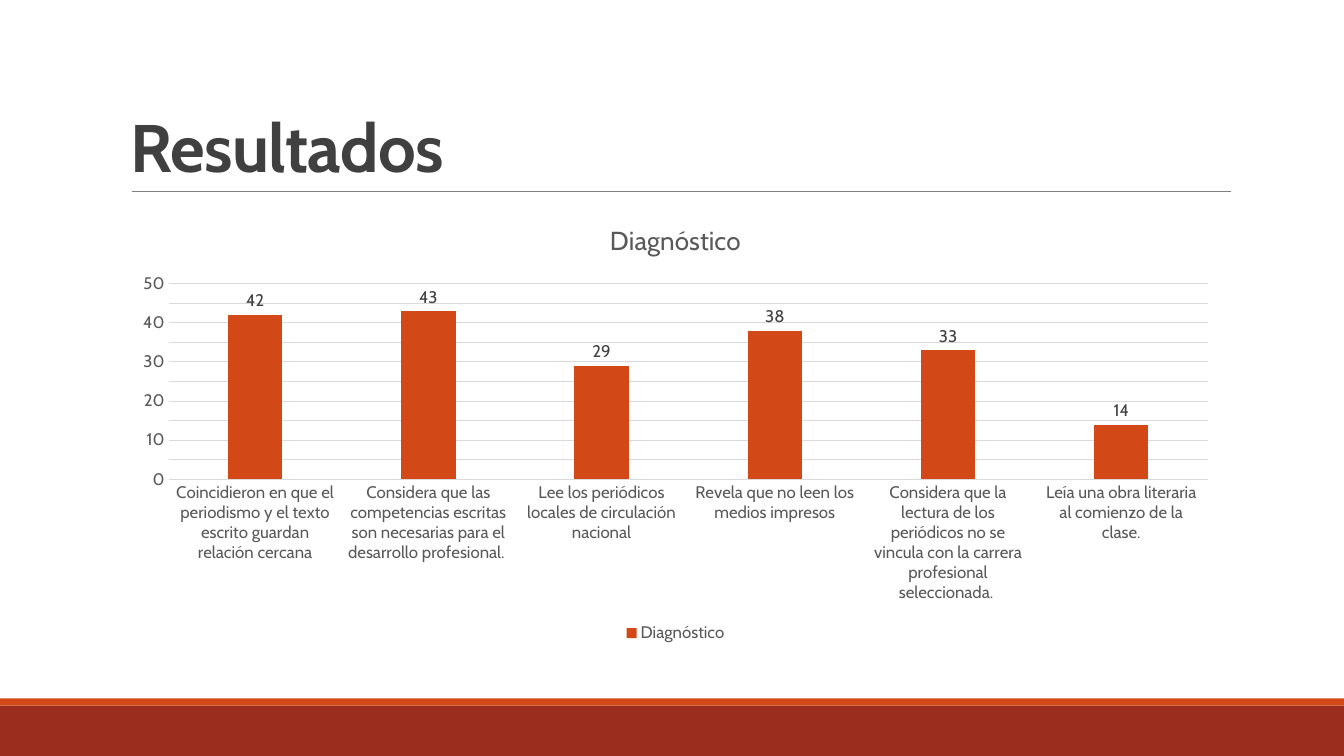
from copy import deepcopy

from pptx import Presentation
from pptx.chart.data import CategoryChartData
from pptx.dml.color import RGBColor
from pptx.enum.chart import XL_CHART_TYPE as ChartType, XL_LABEL_POSITION as LabelPosition
from pptx.enum.chart import XL_LEGEND_POSITION as LegendPosition, XL_TICK_MARK as TickMark
from pptx.enum.shapes import MSO_CONNECTOR as Connector, MSO_SHAPE as Shape
from pptx.enum.text import MSO_ANCHOR as Anchor
from pptx.oxml.ns import qn
from pptx.util import Inches, Pt
from lxml import etree

FONT = "Cabin"
COLORS = {
    "band": "9B2D1F",
    "accent": "D34817",
    "rule": "808080",
    "dark": "404040",
    "text": "595959",
    "grid": "D9D9D9",
}
ANSWERS = {
    "Coincidieron en que el periodismo y el texto escrito guardan relación cercana": 42,
    "Considera que las competencias escritas son necesarias para el desarrollo profesional. ": 43,
    "Lee los periódicos locales de circulación nacional": 29,
    "Revela que no leen los medios impresos": 38,
    "Considera que la lectura de los periódicos no se vincula con la carrera "
    "profesional seleccionada. ": 33,
    "Leía una obra literaria al comienzo de la clase.": 14,
}


def color(name):
    return RGBColor.from_string(COLORS[name])


def style_font(font, size, name, bold=False):
    font.name = FONT
    font.size = Pt(size)
    font.bold = bold
    font.color.rgb = color(name)


def style_line(line, name, width):
    line.color.rgb = color(name)
    line.width = Pt(width)


def add_footer(page, left, top, width, height):
    """Draw a thin accent stripe above a dark band."""
    stripe = 0.07
    for name, y, tall in (("band", top + stripe, height - stripe), ("accent", top, stripe)):
        bar = page.shapes.add_shape(
            Shape.RECTANGLE, Inches(left), Inches(y), Inches(width), Inches(tall))
        bar.shadow.inherit = False
        bar.fill.solid()
        bar.fill.fore_color.rgb = color(name)
        bar.line.fill.background()


def add_heading(page, text, left, top, width, height):
    """Set the title at the bottom of its box, with a rule below it."""
    box = page.shapes.add_textbox(Inches(left), Inches(top), Inches(width), Inches(height))
    frame = box.text_frame
    frame.word_wrap = True
    frame.vertical_anchor = Anchor.BOTTOM
    frame.text = text
    para = frame.paragraphs[0]
    para.line_spacing = 0.85
    span = para.runs[0]
    style_font(span.font, 48, "dark", bold=True)
    span.font._element.set("spc", "-50")

    bottom = Inches(top + height)
    rule = page.shapes.add_connector(
        Connector.STRAIGHT, Inches(left + 0.11), bottom, Inches(left + width + 0.01), bottom)
    style_line(rule.line, "rule", 0.5)
    etree.SubElement(rule._element.spPr, qn("a:effectLst"))


def style_gridlines(axis):
    """Give major and minor gridlines the same line."""
    axis.has_major_gridlines = axis.has_minor_gridlines = True
    style_line(axis.major_gridlines.format.line, "grid", 0.75)
    major, minor = (axis._element.find(qn(tag))
                    for tag in ("c:majorGridlines", "c:minorGridlines"))
    minor.append(deepcopy(major.find(qn("c:spPr"))))


def add_results_chart(page, name, answers, left, top, width, height):
    data = CategoryChartData()
    data.categories = list(answers)
    data.add_series(name, list(answers.values()))
    chart = page.shapes.add_chart(
        ChartType.COLUMN_CLUSTERED,
        Inches(left), Inches(top), Inches(width), Inches(height), data).chart
    style_font(chart.font, 10, "text")

    chart.has_title = True
    title = chart.chart_title.text_frame
    title.text = name
    style_font(title.paragraphs[0].runs[0].font, 18.6, "text")

    chart.has_legend = True
    chart.legend.position = LegendPosition.BOTTOM
    chart.legend.include_in_layout = False
    style_font(chart.legend.font, 12, "text")

    for axis in (chart.category_axis, chart.value_axis):
        axis.major_tick_mark = axis.minor_tick_mark = TickMark.NONE
        style_font(axis.tick_labels.font, 12, "text")
    style_line(chart.category_axis.format.line, "grid", 0.75)

    values = chart.value_axis
    values.minimum_scale, values.maximum_scale = 0, 50
    values.major_unit, values.minor_unit = 10, 5
    values.format.line.fill.background()
    style_gridlines(values)

    plot = chart.plots[0]
    plot.vary_by_categories = False
    plot.gap_width = 219
    plot.overlap = -27
    plot.series[0].format.fill.solid()
    plot.series[0].format.fill.fore_color.rgb = color("accent")
    plot.has_data_labels = True
    labels = plot.data_labels
    labels.show_value = True
    labels.position = LabelPosition.OUTSIDE_END
    style_font(labels.font, 12, "dark")


def main():
    deck = Presentation()
    deck.slide_width, deck.slide_height = Inches(13.33), Inches(7.5)
    page = deck.slides.add_slide(deck.slide_layouts[6])
    add_footer(page, 0, 6.93, 13.33, 0.57)
    add_heading(page, "Resultados", 1.2, 0.31, 11, 1.59)
    add_results_chart(page, "Diagnóstico", ANSWERS, 1.2, 2.02, 11, 4.4)
    deck.save("out.pptx")


if __name__ == "__main__":
    main()
